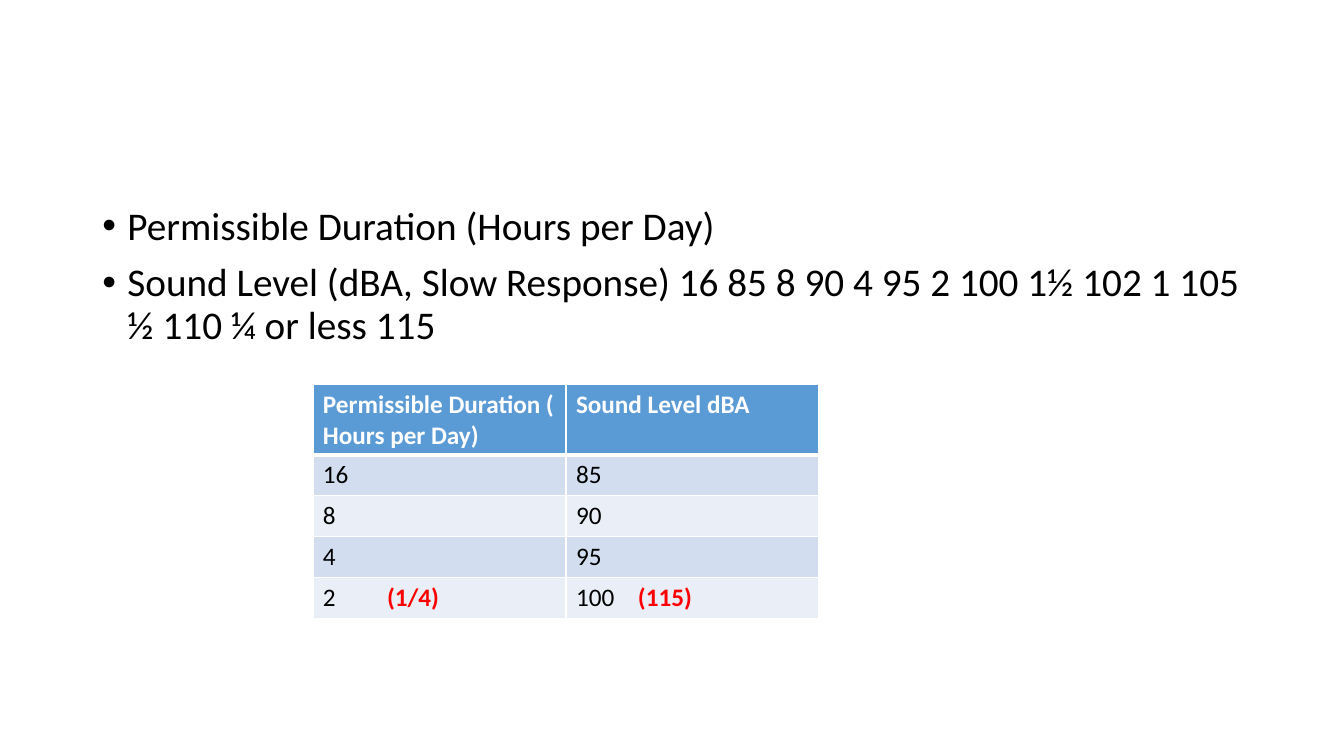
from dataclasses import dataclass

from lxml import etree
from pptx import Presentation
from pptx.dml.color import RGBColor
from pptx.oxml.ns import qn
from pptx.util import Pt

EMU_PER_PX = 9525
FONT = "Calibri"
BULLET_FONT = "Arial"
BULLET_INDENT = 24
COLORS = {
    "text": "000000",
    "white": "FFFFFF",
    "header": "5B9BD5",
    "odd": "D2DEEF",
    "even": "EAEFF7",
    "accent": "FF0000",
}


@dataclass(frozen=True)
class Box:
    left: int
    top: int
    width: int
    height: int


@dataclass(frozen=True)
class Cell:
    text: str
    note: str = ""
    note_offset: int = 0


BODY_BOX = Box(88, 192, 1104, 457)
BULLETS = [
    "Permissible Duration (Hours per Day)",
    "Sound Level (dBA, Slow Response) 16 85 8 90 4 95 2 100 1½ 102 1 105 ½ 110 ¼ or less 115",
]
TABLE_BOX = Box(298, 366, 482, 223)
HEADER_HEIGHT = 67
ROWS = [
    [Cell("Permissible Duration ( Hours per Day)"), Cell("Sound Level dBA")],
    [Cell("16"), Cell("85")],
    [Cell("8"), Cell("90")],
    [Cell("4"), Cell("95")],
    [Cell("2", "(1/4)", 61), Cell("100", "(115)", 59)],
]


def px(length: int) -> int:
    return length * EMU_PER_PX


def place(box: Box) -> tuple[int, int, int, int]:
    return px(box.left), px(box.top), px(box.width), px(box.height)


def rgb(name: str) -> RGBColor:
    return RGBColor.from_string(COLORS[name])


def add_run(paragraph, text: str, size: int, color: str, bold: bool = False) -> None:
    run = paragraph.add_run()
    run.text = text
    run.font.name = FONT
    run.font.size = Pt(size)
    run.font.bold = bold
    run.font.color.rgb = rgb(color)


def add_bullets(slide) -> None:
    frame = slide.shapes.add_textbox(*place(BODY_BOX)).text_frame
    frame.word_wrap = True
    for index, text in enumerate(BULLETS):
        paragraph = frame.paragraphs[0] if index == 0 else frame.add_paragraph()
        paragraph.line_spacing = 0.9
        paragraph.space_before = Pt(10)
        properties = paragraph._p.get_or_add_pPr()
        properties.set("marL", str(px(BULLET_INDENT)))
        properties.set("indent", str(-px(BULLET_INDENT)))
        etree.SubElement(properties, qn("a:buFont"), typeface=BULLET_FONT)
        etree.SubElement(properties, qn("a:buChar"), char="•")
        add_run(paragraph, text, 28, "text")


def set_borders(cell, widths: dict[str, int]) -> None:
    properties = cell._tc.get_or_add_tcPr()
    for position, (side, width) in enumerate(widths.items()):
        line = etree.Element(qn(f"a:ln{side}"), w=str(Pt(width)))
        fill = etree.SubElement(line, qn("a:solidFill"))
        etree.SubElement(fill, qn("a:srgbClr"), val=COLORS["white"])
        properties.insert(position, line)


def fill_cell(cell, content: Cell, row_index: int) -> None:
    is_header = row_index == 0
    fill_name = "header" if is_header else "odd" if row_index % 2 else "even"
    cell.fill.solid()
    cell.fill.fore_color.rgb = rgb(fill_name)
    top = 3 if row_index == 1 else 1
    bottom = 3 if is_header else 1
    set_borders(cell, {"L": 1, "R": 1, "T": top, "B": bottom})
    paragraph = cell.text_frame.paragraphs[0]
    add_run(paragraph, content.text, 18, "white" if is_header else "text", is_header)
    if content.note:
        tabs = etree.SubElement(paragraph._p.get_or_add_pPr(), qn("a:tabLst"))
        etree.SubElement(tabs, qn("a:tab"), pos=str(px(content.note_offset)), algn="l")
        add_run(paragraph, "\t" + content.note, 18, "accent", True)


def add_noise_table(slide) -> None:
    frame = slide.shapes.add_table(len(ROWS), len(ROWS[0]), *place(TABLE_BOX))
    table = frame.table
    row_height = (TABLE_BOX.height - HEADER_HEIGHT) // (len(ROWS) - 1)
    for column in table.columns:
        column.width = px(TABLE_BOX.width // len(ROWS[0]))
    for row_index, contents in enumerate(ROWS):
        table.rows[row_index].height = px(row_height if row_index else HEADER_HEIGHT)
        for column_index, content in enumerate(contents):
            fill_cell(table.cell(row_index, column_index), content, row_index)


def main() -> None:
    presentation = Presentation()
    presentation.slide_width = px(1280)
    presentation.slide_height = px(720)
    slide = presentation.slides.add_slide(presentation.slide_layouts[6])
    add_bullets(slide)
    add_noise_table(slide)
    presentation.save("out.pptx")


if __name__ == "__main__":
    main()
